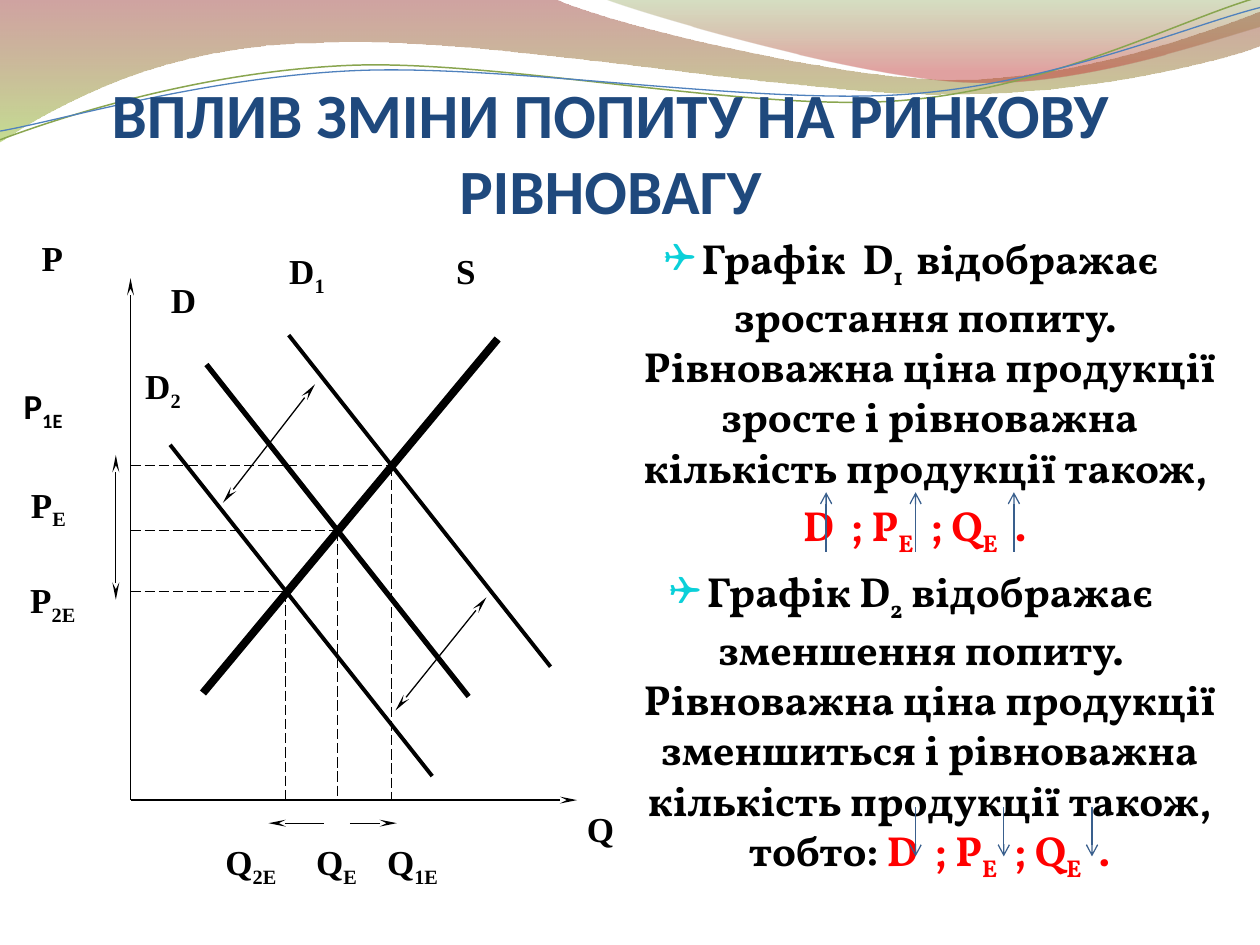
import pptx
import pptx.util
import pptx.dml.color
import pptx.enum.dml
import pptx.enum.shapes
import pptx.enum.text
import pptx.oxml.ns
from lxml import etree

Pt = pptx.util.Pt
qn = pptx.oxml.ns.qn
ALIGN = pptx.enum.text.PP_ALIGN
ANCHOR = pptx.enum.text.MSO_ANCHOR
COLORS = {
    "black": "000000", "red": "FF0000", "title": "1F497D", "bullet": "0BD0D9",
    "arrow": "395F8D", "green_line": "89A54F", "blue_line": "4F81BD",
    "maroon": "973330", "lime": "95C238", "olive": "769537", "brick": "BE3330",
}


def rgb(name):
    return pptx.dml.color.RGBColor.from_string(COLORS[name])


def add_text(p, text, size=20, font="Times New Roman", color="black", sub=False):
    r = p.add_run()
    r.text = text
    r.font.size = Pt(size)
    r.font.name = font
    r.font.bold = True
    r.font.color.rgb = rgb(color)
    if sub:
        r.font._element.set("baseline", "-25000")
    return r


def add_box(s, x, y, w, h, left=0, right=0, vertical=0):
    tf = s.shapes.add_textbox(Pt(x), Pt(y), Pt(w), Pt(h)).text_frame
    tf.word_wrap = True
    tf.margin_left, tf.margin_right = Pt(left), Pt(right)
    tf.margin_top = tf.margin_bottom = Pt(vertical)
    return tf


def add_line(s, x1, y1, x2, y2, width=0.75, color="black", dash=False, head=None, tail=None):
    c = s.shapes.add_connector(pptx.enum.shapes.MSO_CONNECTOR.STRAIGHT,
                               Pt(x1), Pt(y1), Pt(x2), Pt(y2))
    c.line.width = Pt(width)
    c.line.color.rgb = rgb(color)
    if dash:
        c.line.dash_style = pptx.enum.dml.MSO_LINE.LONG_DASH
    ln = c.line._get_or_add_ln()
    for tag, kind in (("a:headEnd", head), ("a:tailEnd", tail)):
        if kind:
            end = etree.SubElement(ln, qn(tag), type=kind)
            if kind == "stealth":
                end.set("w", "sm")
                end.set("len", "lg")
    etree.SubElement(c._element.spPr, qn("a:effectLst"))


def add_curve(s, left, top, segments, close):
    points = [(Pt(left + seg[i]), Pt(top + seg[i + 1]))
              for seg in segments for i in range(0, len(seg), 2)]
    fb = s.shapes.build_freeform(*points[0])
    fb.add_line_segments(points[1:], close=close)
    sp = fb.convert_to_shape()
    sp.shadow.inherit = False
    steps = iter(list(sp._element.iter(qn("a:lnTo"))))
    for seg in segments[1:]:
        first = next(steps)
        if len(seg) == 6:
            curve = etree.Element(qn("a:cubicBezTo"))
            first.addprevious(curve)
            for step in (first, next(steps), next(steps)):
                curve.append(step[0])
                step.getparent().remove(step)
    return sp


def add_waves(s, left, top):
    bands = [
        ([(0, -0.7), (316.8, -0.7), (342.7, 12.2, 478.1, 45.4, 545.8, 45.4),
          (614.2, 45.4, 689.8, 18.7, 720, 6.5), (720.7, 25.9),
          (707.8, 31.7, 626.4, 54.7, 537.1, 54), (447.8, 54, 275, 20.2, 185, 24.5),
          (92.9, 25.2, 33.1, 59.8, -0.7, 81.4)],
         [(0, "maroon", 45), (1, "lime", 55)]),
        ([(344.9, -0.7), (366.5, 7.9, 491, 44.6, 553.7, 46.8),
          (616.3, 49.7, 691.9, 23, 720, 15.1), (720, 0)],
         [(0, "olive", 30), (0.8, "brick", 45)]),
    ]
    for segments, stops in bands:
        sp = add_curve(s, left, top, segments, True)
        sp.line.fill.background()
        sp.fill.gradient()
        sp.fill.gradient_angle = 270
        for stop, (position, color, alpha) in zip(sp.fill.gradient_stops, stops):
            stop.position = position
            stop.color.rgb = rgb(color)
            clr = stop._gs.find(qn("a:srgbClr"))
            etree.SubElement(clr, qn("a:alpha"), val=str(alpha * 1000))
    lines = [
        ([(0, 79.9), (34.6, 67, 113.8, 41, 199.4, 37.4),
          (284.4, 33.8, 427, 64.1, 513.4, 57.6), (599.8, 51.1, 675.4, 10.8, 718.6, -1.4)],
         "green_line", 0.85),
        ([(0, 74.9), (33.8, 69.1, 118.1, 43.9, 203.8, 40.3),
          (290.2, 36.7, 429.8, 59.8, 516.2, 54), (601.9, 48.2, 677.5, 15.1, 720, 4.3)],
         "blue_line", 0.75),
    ]
    for segments, color, width in lines:
        sp = add_curve(s, left, top, segments, False)
        sp.fill.background()
        sp.line.color.rgb = rgb(color)
        sp.line.width = Pt(width)


def add_title(s, x, y, w, h):
    sp = s.shapes.title
    sp.left, sp.top, sp.width, sp.height = Pt(x), Pt(y), Pt(w), Pt(h)
    tf = sp.text_frame
    tf.auto_size = pptx.enum.text.MSO_AUTO_SIZE.NONE
    tf.vertical_anchor = ANCHOR.BOTTOM
    tf.margin_left = tf.margin_right = tf.margin_bottom = 0
    p = tf.paragraphs[0]
    p.alignment = ALIGN.CENTER
    add_text(p, "ВПЛИВ ЗМІНИ ПОПИТУ НА РИНКОВУ РІВНОВАГУ", size=36, font="Calibri", color="title")
    s.shapes._spTree.append(sp._element)


def add_demand_graph(s, left, top):
    labels = [
        ("Q", "", 328.3, 328, 49, 46, 7.2, 3.6), ("S", "", 260.6, 12.6, 26, 42.5, 0, 0),
        ("D", "", 97.6, 29, 23, 35.3, 0, 0), ("P", "E", 17.7, 146, 34, 37.4, 0, 0),
        ("Q", "E", 175.7, 350.3, 36, 37.4, 5, 0), ("P", "", 23.8, 5.4, 28, 46.8, 0, 0),
        ("D", "1", 165.3, 12.6, 36, 37.4, 0, 0), ("D", "2", 83, 78.4, 28, 38.2, 0, 0),
        ("P", "2E", 17.3, 200.5, 38.2, 38.9, 0, 0), ("P", "1E", 0, 89.6, 57.6, 41.8, 13.5, 0),
        ("Q", "2E", 118.8, 350.3, 46.8, 30.2, 10, 0), ("Q", "1E", 221.2, 350.3, 45.4, 37.4, 0, 0),
    ]
    for name, index, x, y, w, h, indent, vertical in labels:
        p = add_box(s, left + x, top + y, w, h, left=indent, vertical=vertical).paragraphs[0]
        font = "Calibri" if name + index == "P1E" else "Times New Roman"
        add_text(p, name, font=font)
        if index:
            add_text(p, index, font=font, sub=True)

    def line(x1, y1, x2, y2, **fmt):
        add_line(s, left + x1, top + y1, left + x2, top + y2, **fmt)

    for ends, width in [((118, 78.3, 267.8, 268), 3), ((116, 266, 284.4, 63.7), 4.5),
                        ((165, 61.5, 314.6, 251), 2.25), ((97.2, 124.2, 247, 313.5), 2.25)]:
        line(*ends, width=width)
    axis_x, axis_y = 74.6, 327.2
    for x, y in [(192.7, 173), (223.7, 136), (163.3, 207.9)]:
        line(axis_x, y, x, y, dash=True)
        line(x, y, x, axis_y, dash=True)
    for ends in [(axis_x, axis_y, axis_x, 29), (axis_x, axis_y, 329.8, axis_y),
                 (153.4, 124, 180, 89.6), (154, 123, 127.4, 157.3),
                 (200, 340.4, 226.8, 340.4), (185, 340.4, 153.4, 340.4),
                 (66.2, 179, 66.2, 130), (66.2, 179, 66.2, 212.7)]:
        line(*ends, tail="stealth")
    line(278, 211.3, 226, 276, head="stealth", tail="stealth")


def add_explanation(s, x, y, w, h):
    def formula(lead):
        return [(lead + "D  ; P", "red", False), ("Е", "red", True), ("  ; Q", "red", False),
                ("Е", "red", True), ("  .", "red", False)]

    paragraphs = [
        (True, [("Графік  D", "black", False), ("1 ", "black", True),
                (" відображає зростання попиту.  Рівноважна ціна продукції зросте "
                 "і рівноважна кількість продукції також, ", "black", False)]),
        (False, formula(" ")),
        (True, [("Графік D", "black", False), ("2", "black", True),
                (" відображає зменшення попиту.   Рівноважна ціна продукції зменшиться "
                 "і рівноважна кількість продукції також, тобто: ", "black", False)] + formula("")),
    ]
    tf = add_box(s, x, y, w, h, left=7.2, right=7.2, vertical=3.6)
    for i, (bulleted, runs) in enumerate(paragraphs):
        p = tf.add_paragraph() if i else tf.paragraphs[0]
        p.alignment = ALIGN.CENTER
        pPr = p._p.get_or_add_pPr()
        pPr.set("marL", str(Pt(21.6)))
        pPr.set("indent", str(-Pt(21.6)))
        before = etree.SubElement(pPr, qn("a:spcBef"))
        etree.SubElement(before, qn("a:spcPct"), val="20000")
        if bulleted:
            color = etree.SubElement(pPr, qn("a:buClr"))
            etree.SubElement(color, qn("a:srgbClr"), val=COLORS["bullet"])
            etree.SubElement(pPr, qn("a:buSzPct"), val="95000")
            etree.SubElement(pPr, qn("a:buFont"), typeface="Wingdings")
            etree.SubElement(pPr, qn("a:buChar"), char="❑")
        for text, color, sub in runs:
            add_text(p, text, size=24, font="Vollkorn", color=color, sub=sub)
    for xs, start, end in [((134.6, 185.7, 241.9), 185.8, 151.9),
                           ((185.7, 236.1, 286.5), 331.9, 360)]:
        for dx in xs:
            add_line(s, x + dx, y + start, x + dx, y + end, color="arrow", tail="arrow")


def main():
    prs = pptx.Presentation()
    prs.slide_width, prs.slide_height = Pt(720), Pt(540)
    s = prs.slides.add_slide(prs.slide_layouts[5])
    add_waves(s, 0, 0)
    add_demand_graph(s, 0, 130)
    add_title(s, 0, 55.4, 697.7, 74.2)
    add_explanation(s, 337.5, 129.4, 365.8, 390.2)
    prs.save("out.pptx")


if __name__ == "__main__":
    main()
